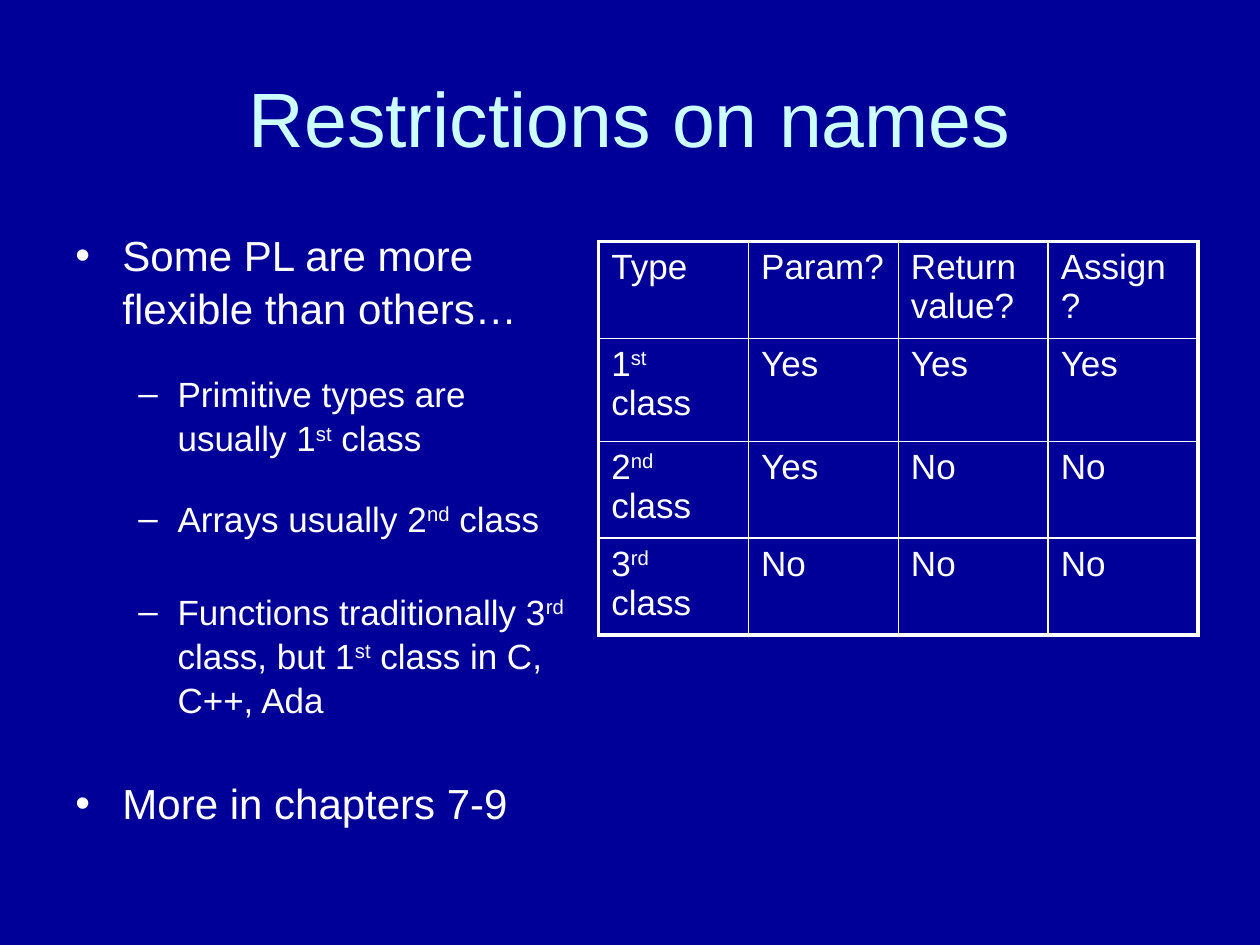
"""Build the slide on restrictions on names in programming languages."""
from lxml.etree import SubElement
from pptx import Presentation
from pptx.dml.color import RGBColor
from pptx.enum.text import MSO_ANCHOR as Anchor, PP_ALIGN as Align
from pptx.oxml.ns import qn
from pptx.util import Cm, Pt

NAVY, WHITE, PALE_CYAN = "000099", "FFFFFF", "CCFFFF"
TITLE = "Restrictions on names"
BULLETS = [
    (0, 0, "Some PL are more flexible than others…"),
    (1, 21.7, "Primitive types are usually 1^st^ class"),
    (1, 20.6, "Arrays usually 2^nd^ class"),
    (1, 28, "Functions traditionally 3^rd^ class, but 1^st^ class in C, C++, Ada"),
    (0, 31.4, "More in chapters 7-9"),
]
LEVELS = [
    {"size": 24, "mark": "•", "margin": 0.95, "hanging": 0.95},
    {"size": 20, "mark": "–", "margin": 2.06, "hanging": 0.79},
]
TABLE = [
    ["Type", "Param?", "Return value?", "Assign?"],
    ["1^st^ class", "Yes", "Yes", "Yes"],
    ["2^nd^ class", "Yes", "No", "No"],
    ["3^rd^ class", "No", "No", "No"],
]
COLUMN_WIDTH = 3.02
ROW_HEIGHTS = [1.95, 2.08, 1.95, 1.95]
OUTER_LINE, INNER_LINE = 2.25, 1


def color(value):
    return RGBColor.from_string(value)


def write(paragraph, text, size, font_color=WHITE):
    for index, part in enumerate(text.split("^")):
        run = paragraph.add_run()
        run.text = part
        for name, value in {"name": "Arial", "size": Pt(size)}.items():
            setattr(run.font, name, value)
        run.font.color.rgb = color(font_color)
        if index % 2:
            run.font._element.set("baseline", "30000")


def add_title(slide):
    title = slide.shapes.title
    place = {"left": 1.27, "top": 0.76, "width": 22.86, "height": 3.18}
    for name, value in place.items():
        setattr(title, name, Cm(value))
    title.text_frame.vertical_anchor = Anchor.MIDDLE
    paragraph = title.text_frame.paragraphs[0]
    paragraph.alignment = Align.CENTER
    write(paragraph, TITLE, 44, PALE_CYAN)


def add_bullets(slide):
    box = slide.shapes.add_textbox(Cm(1.27), Cm(4.45), Cm(10.36), Cm(12.57))
    frame = box.text_frame
    frame.word_wrap = True
    for index, (level, space, text) in enumerate(BULLETS):
        paragraph = frame.add_paragraph() if index else frame.paragraphs[0]
        style = LEVELS[level]
        formats = {"level": level, "space_before": Pt(space), "line_spacing": 1.05}
        for name, value in formats.items():
            setattr(paragraph, name, value)
        properties = paragraph._p.get_or_add_pPr()
        properties.set("marL", str(Cm(style["margin"])))
        properties.set("indent", str(-Cm(style["hanging"])))
        SubElement(properties, qn("a:buFont"), typeface="Arial")
        SubElement(properties, qn("a:buChar"), char=style["mark"])
        write(paragraph, text, style["size"])


def set_borders(cell, outer_sides):
    properties = cell._tc.get_or_add_tcPr()
    for side, is_outer in outer_sides.items():
        width = Pt(OUTER_LINE if is_outer else INNER_LINE)
        line = SubElement(properties, qn("a:ln" + side), w=str(width))
        fill = SubElement(line, qn("a:solidFill"))
        SubElement(fill, qn("a:srgbClr"), val=WHITE)


def add_class_table(slide):
    rows, columns = len(TABLE), len(TABLE[0])
    table = slide.shapes.add_table(
        rows, columns, Cm(12.07), Cm(4.87),
        Cm(COLUMN_WIDTH * columns), Cm(sum(ROW_HEIGHTS))).table
    table.first_row = table.horz_banding = False
    for column in table.columns:
        column.width = Cm(COLUMN_WIDTH)
    for row, height in zip(table.rows, ROW_HEIGHTS):
        row.height = Cm(height)
    for r, texts in enumerate(TABLE):
        for c, text in enumerate(texts):
            cell = table.cell(r, c)
            set_borders(cell, {"L": c == 0, "R": c == columns - 1,
                               "T": r == 0, "B": r == rows - 1})
            cell.fill.background()
            write(cell.text_frame.paragraphs[0], text, 20)


def main():
    presentation = Presentation()
    presentation.slide_width, presentation.slide_height = Cm(25.4), Cm(19.05)
    slide = presentation.slides.add_slide(presentation.slide_layouts[5])
    slide.background.fill.solid()
    slide.background.fill.fore_color.rgb = color(NAVY)
    add_title(slide)
    add_bullets(slide)
    add_class_table(slide)
    presentation.save("out.pptx")


if __name__ == "__main__":
    main()
